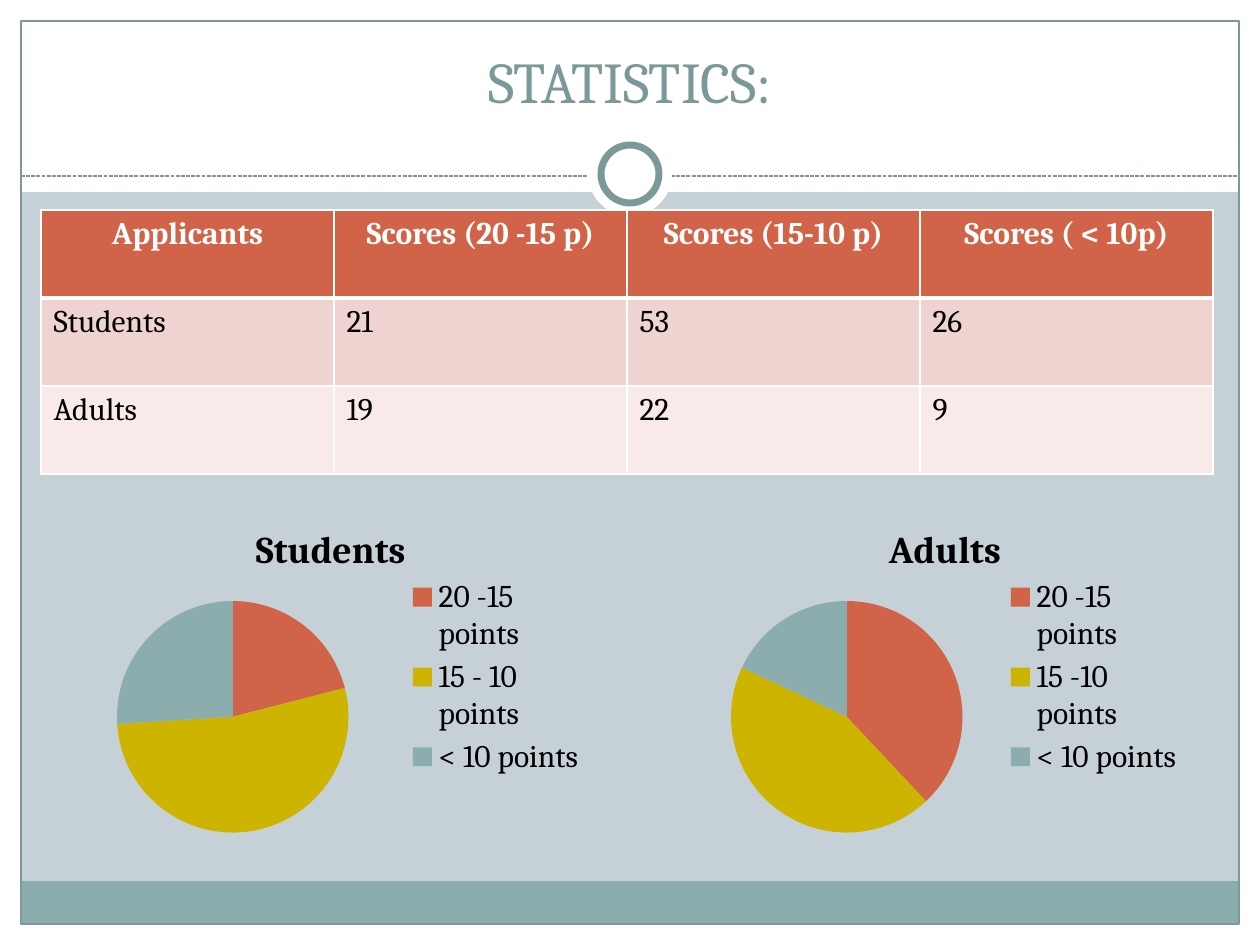
from lxml.etree import SubElement
from pptx import Presentation
from pptx.chart.data import CategoryChartData
from pptx.dml.color import RGBColor as RGB
from pptx.enum.chart import XL_CHART_TYPE as Chart, XL_LEGEND_POSITION as Legend
from pptx.enum.dml import MSO_LINE as Dash
from pptx.enum.shapes import MSO_CONNECTOR as Connector, MSO_SHAPE as Shape
from pptx.enum.text import MSO_ANCHOR as Anchor, MSO_AUTO_SIZE as AutoSize, PP_ALIGN as Align
from pptx.oxml.ns import qn
from pptx.util import Emu, Pt


class Theme:
    font = "Cambria"
    title_size, body_size, chart_title_size = Pt(33), Pt(18), Pt(21.6)
    white, black = "FFFFFF", "000000"
    background, outline, footer = "C5D1D7", "7C999A", "8CADAE"
    header, rows = "D16349", ("EED3D0", "F7EAE9")
    slices = ("D16349", "CCB400", "8CADAE")


TABLE = [
    ["Applicants", "Scores (20 -15 p)", "Scores (15-10 p)", "Scores ( < 10p)"],
    ["Students", "21", "53", "26"],
    ["Adults", "19", "22", "9"],
]
PIES = [
    ("Students", ["20 -15 points", "15 - 10 points", "< 10 points"], [21, 53, 26], (63, 504, 536, 346)),
    ("Adults", ["20 -15 points", "15 -10 points", "< 10 points"], [38, 44, 18], (693, 504, 504, 346)),
]


def px(n):
    """Convert px to EMU at 126 px to the inch."""
    return Emu(round(n * 914400 / 126))


def place(box):
    return [px(n) for n in box]


def style_font(font, size, color, bold=False):
    font.name, font.size, font.bold = Theme.font, size, bold
    font.color.rgb = RGB.from_string(color)


def add_shape(s, kind, box, fill=None, line=None, width=0.75):
    sp = s.shapes.add_shape(kind, *place(box))
    sp.shadow.inherit = False
    if fill:
        sp.fill.solid()
        sp.fill.fore_color.rgb = RGB.from_string(fill)
    else:
        sp.fill.background()
    if line:
        sp.line.color.rgb = RGB.from_string(line)
        sp.line.width = Pt(width)
    else:
        sp.line.fill.background()
    return sp


def add_frame(s, box):
    x, y, w, h = box
    margin, header_h, footer_h = 21, 192, 43
    inner_w, inner_h = w - 2 * margin, h - 2 * margin

    # White margins and header band
    for band in [(x, y + h - margin, w, margin), (x, y, w, header_h),
                 (x, y, margin, h), (x + w - margin, y, margin, h)]:
        add_shape(s, Shape.RECTANGLE, band, Theme.white)

    # Footer band and outline
    add_shape(s, Shape.RECTANGLE,
              (x + margin, y + h - margin - footer_h, inner_w, footer_h), Theme.footer)
    add_shape(s, Shape.RECTANGLE, (x + margin, y + margin, inner_w, inner_h), line=Theme.outline)

    # Dashed divider
    rule_y = y + 176
    rule = s.shapes.add_connector(
        Connector.STRAIGHT, *place((x + margin, rule_y, x + w - margin, rule_y)))
    rule.line.color.rgb = RGB.from_string(Theme.outline)
    rule.line.width = Pt(0.75)
    rule.line.dash_style = Dash.SQUARE_DOT
    SubElement(rule.element.spPr, qn("a:effectLst"))

    # Ring centred on the divider
    for size, line in ((84, None), (58, Theme.outline)):
        add_shape(s, Shape.OVAL, (x + (w - size) // 2, y + 174 - size // 2, size, size),
                  Theme.white, line, 4)


def add_title(s, box, text):
    title = s.shapes.title
    title.left, title.top, title.width, title.height = place(box)
    title.element.getparent().append(title.element)  # in front of the frame
    tf = title.text_frame
    tf.text = text
    tf.word_wrap, tf.auto_size = True, AutoSize.NONE
    tf.vertical_anchor = Anchor.BOTTOM
    tf.margin_bottom = px(74)
    p = tf.paragraphs[0]
    p.alignment = Align.CENTER
    style_font(p.font, Theme.title_size, Theme.outline)


def set_borders(cell, **widths):
    """Set white borders; widths in points are keyed by L, R, T and B."""
    tc_pr = cell._tc.get_or_add_tcPr()
    for i, (side, width) in enumerate(widths.items()):
        ln = SubElement(tc_pr, qn(f"a:ln{side}"), w=str(Pt(width)))
        SubElement(SubElement(ln, qn("a:solidFill")), qn("a:srgbClr"), val=Theme.white)
        tc_pr.insert(i, ln)


def add_score_table(s, box, data):
    table = s.shapes.add_table(len(data), len(data[0]), *place(box)).table
    for column in table.columns:
        column.width = px(box[2] / len(data[0]))
    for r, values in enumerate(data):
        table.rows[r].height = px(box[3] / len(data))
        is_header = r == 0
        fill = Theme.header if is_header else Theme.rows[(r - 1) % 2]
        for c, value in enumerate(values):
            cell = table.cell(r, c)
            cell.text = value
            cell.fill.solid()
            cell.fill.fore_color.rgb = RGB.from_string(fill)
            p = cell.text_frame.paragraphs[0]
            p.alignment = Align.CENTER if is_header else Align.LEFT
            style_font(p.font, Theme.body_size, Theme.white if is_header else Theme.black, is_header)
            set_borders(cell, L=1, R=1, T=3 if r == 1 else 1, B=3 if is_header else 1)


def add_pie(s, box, name, categories, values):
    data = CategoryChartData()
    data.categories = categories
    data.add_series(name, values)
    chart = s.shapes.add_chart(Chart.PIE, *place(box), data).chart
    style_font(chart.font, Theme.body_size, Theme.black)

    # Title and legend
    chart.has_title = True
    tf = chart.chart_title.text_frame
    tf.text = name
    style_font(tf.paragraphs[0].font, Theme.chart_title_size, Theme.black, True)
    chart.has_legend = True
    chart.legend.position = Legend.RIGHT
    chart.legend.include_in_layout = False

    # Slice colours
    plot = chart.plots[0]
    plot.vary_by_categories = True
    for i, color in enumerate(Theme.slices):
        fill = plot.series[0].points[i].format.fill
        fill.solid()
        fill.fore_color.rgb = RGB.from_string(color)


def main():
    prs = Presentation()
    prs.slide_width, prs.slide_height = px(1260), px(945)
    s = prs.slides.add_slide(prs.slide_layouts.get_by_name("Title Only"))
    s.background.fill.solid()
    s.background.fill.fore_color.rgb = RGB.from_string(Theme.background)

    add_frame(s, (0, 0, 1260, 945))
    add_title(s, (63, 32, 1134, 157), "STATISTICS:")
    add_score_table(s, (41, 210, 1172, 264), TABLE)
    for name, categories, values, box in PIES:
        add_pie(s, box, name, categories, values)

    prs.save("out.pptx")


if __name__ == "__main__":
    main()
